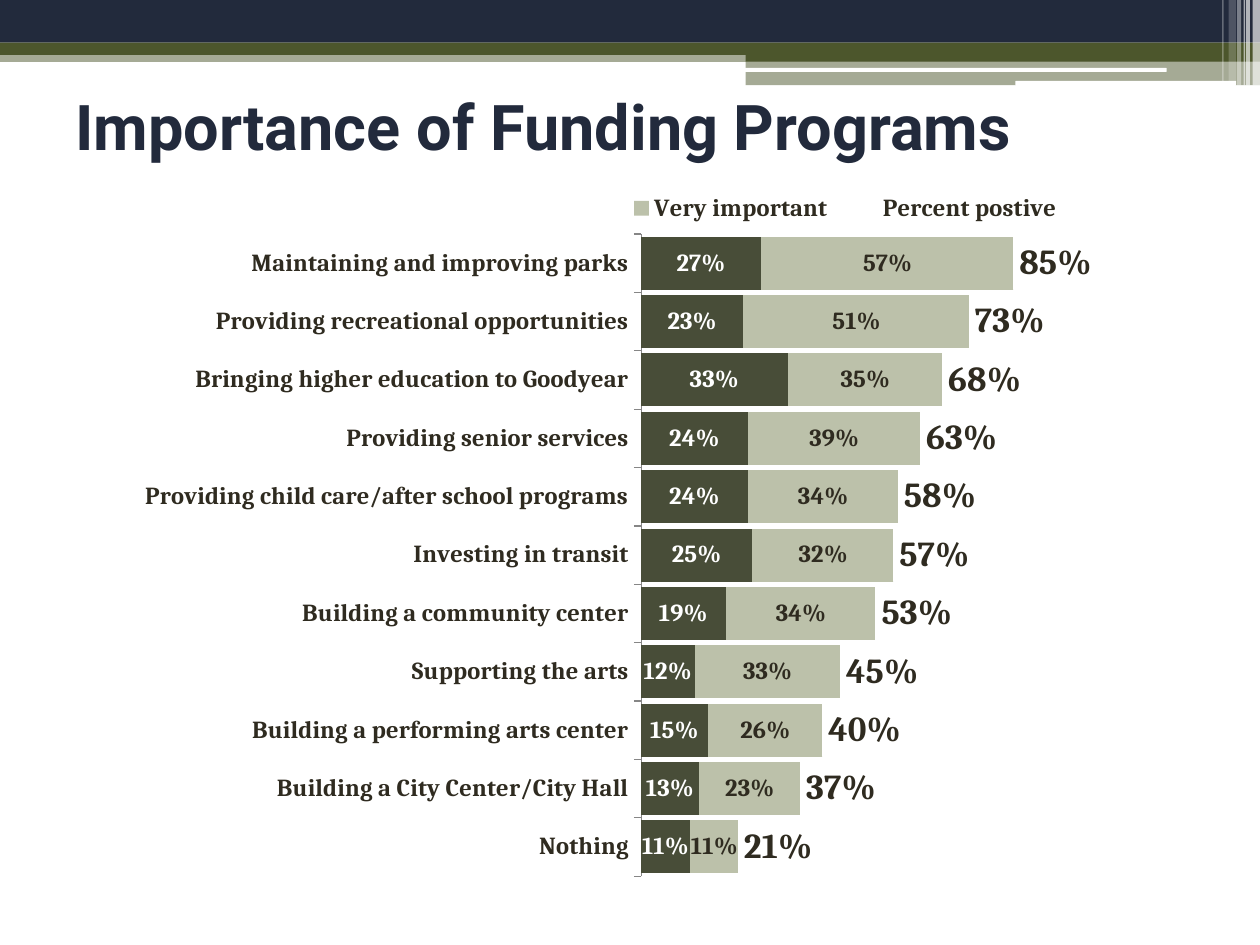
"""Builds the slide on the importance of funding programs."""
from lxml.etree import SubElement
from pptx import Presentation
from pptx.chart.data import CategoryChartData
from pptx.dml.color import RGBColor
from pptx.enum.chart import XL_CHART_TYPE, XL_LABEL_POSITION, XL_LEGEND_POSITION, XL_TICK_LABEL_POSITION, XL_TICK_MARK
from pptx.enum.shapes import MSO_SHAPE
from pptx.enum.text import MSO_ANCHOR
from pptx.oxml import parse_xml
from pptx.oxml.ns import nsdecls, qn
from pptx.util import Cm, Pt

NAVY, OLIVE, WHITE, INK = "222A3C", "4C562C", "FFFFFF", "2F2B20"
BANDS = [
    (0, 1.02, 25.4, 0.23, OLIVE, 50),
    (0, 0, 25.4, 0.86, NAVY, 100),
    (0, 0.86, 25.4, 0.25, OLIVE, 100),
    (15.03, 0.99, 10.37, 0.25, OLIVE, 100),
    (15.03, 1.23, 10.37, 0.49, OLIVE, 50),
]
ROUNDED_BARS = [(15.01, 1.37, 8.51, 0.08), (20.47, 1.63, 4.45, 0.1)]
STRIPES = [
    (25.25, 0.15, 1.73, 65),
    (25.12, 0.08, 1.73, 65),
    (25.07, 0.03, 1.73, 60),
    (24.94, 0.08, 1.73, 40),
    (24.77, 0.15, 1.63, 20),
    (24.64, 0.03, 1.63, 30),
]
PROGRAMS = [
    ("Nothing", 0.11, 0.11, 0.21),
    ("Building a City Center/City Hall", 0.13, 0.23, 0.37),
    ("Building a performing arts center", 0.15, 0.26, 0.40),
    ("Supporting the arts", 0.12, 0.33, 0.45),
    ("Building a community center", 0.19, 0.34, 0.53),
    ("Investing in transit", 0.25, 0.32, 0.57),
    ("Providing child care/after school programs", 0.24, 0.34, 0.58),
    ("Providing senior services", 0.24, 0.39, 0.63),
    ("Bringing higher education to Goodyear", 0.33, 0.35, 0.68),
    ("Providing recreational opportunities", 0.23, 0.51, 0.73),
    ("Maintaining and improving parks", 0.27, 0.57, 0.85),
]
SERIES = [
    ("", "484D38", WHITE, 14, XL_LABEL_POSITION.CENTER),
    ("Very important", "BCC1AA", INK, 14, XL_LABEL_POSITION.CENTER),
    ("Percent postive", None, INK, 20, XL_LABEL_POSITION.INSIDE_BASE),
]


def color(hex_string):
    return RGBColor.from_string(hex_string)


def format_font(font, name="Cambria", size=14, fill=INK, bold=True):
    font.name, font.size, font.bold = name, Pt(size), bold
    font.color.rgb = color(fill)


def add_block(slide, left, top, width, height, fill, opacity=100, kind=MSO_SHAPE.RECTANGLE):
    shape = slide.shapes.add_shape(kind, Cm(left), Cm(top), Cm(width), Cm(height))
    shape.shadow.inherit = False
    shape.line.fill.background()
    shape.fill.solid()
    shape.fill.fore_color.rgb = color(fill)
    if opacity < 100:
        fill_color = shape.fill._xPr.find(qn("a:solidFill"))[0]
        SubElement(fill_color, qn("a:alpha")).set("val", str(opacity * 1000))


def add_text(slide, text, left, top, width, height, **font_format):
    box = slide.shapes.add_textbox(Cm(left), Cm(top), Cm(width), Cm(height))
    frame = box.text_frame
    frame.word_wrap = True
    frame.vertical_anchor = MSO_ANCHOR.MIDDLE
    run = frame.paragraphs[0].add_run()
    run.text = text
    format_font(run.font, **font_format)


def set_layout(parent, index, left, top, width, height, inner=False):
    for old_layout in parent.findall(qn("c:layout")):
        parent.remove(old_layout)
    target = '<c:layoutTarget val="inner"/>' if inner else ""
    modes = '<c:xMode val="edge"/><c:yMode val="edge"/>'
    sizes = "".join(f'<c:{tag} val="{value}"/>' for tag, value in zip("xywh", (left, top, width, height)))
    parent.insert(index, parse_xml(
        f'<c:layout {nsdecls("c")}><c:manualLayout>{target}{modes}{sizes}</c:manualLayout></c:layout>'))


def add_legend(chart):
    chart.has_legend = True
    legend = chart.legend
    legend.position = XL_LEGEND_POSITION.TOP
    legend.include_in_layout = False
    format_font(legend.font)
    set_layout(legend._element, 1, 0.48, 0.03, 0.42, 0.05)
    legend._element.insert(1, parse_xml(
        f'<c:legendEntry {nsdecls("c")}><c:idx val="2"/><c:delete val="1"/></c:legendEntry>'))


def format_axes(chart):
    category_axis, value_axis = chart.category_axis, chart.value_axis
    category_axis.major_tick_mark = XL_TICK_MARK.OUTSIDE
    category_axis.tick_label_position = XL_TICK_LABEL_POSITION.LOW
    category_axis.has_major_gridlines = False
    category_axis.format.line.color.rgb = color("868686")
    category_axis.format.line.width = Pt(0.75)
    format_font(category_axis.tick_labels.font)
    value_axis.minimum_scale, value_axis.maximum_scale, value_axis.major_unit = 0, 1.2, 0.2
    value_axis.has_major_gridlines = False
    value_axis.visible = False


def format_series(series, fill, label_color, label_size, position):
    if fill:
        series.format.fill.solid()
        series.format.fill.fore_color.rgb = color(fill)
    else:
        series.format.fill.background()
        series.format.line.color.rgb = color(WHITE)
        series.format.line.width = Pt(1.5)
    labels = series.data_labels
    labels.show_value = True
    labels.number_format, labels.number_format_is_linked = "0%", False
    labels.position = position
    format_font(labels.font, size=label_size, fill=label_color)


def add_importance_chart(slide):
    names, *columns = zip(*PROGRAMS)
    data = CategoryChartData(number_format="0%")
    data.categories = names
    for (name, *_), values in zip(SERIES, columns):
        data.add_series(name, values)
    chart = slide.shapes.add_chart(
        XL_CHART_TYPE.BAR_STACKED, Cm(1.27), Cm(3.38), Cm(22.86), Cm(14.88), data).chart
    chart.has_title = False
    format_font(chart.font, size=9, bold=False)
    plot = chart.plots[0]
    plot.gap_width, plot.overlap, plot.vary_by_categories = 10, 100, False
    for series, (_, *series_format) in zip(plot.series, SERIES):
        format_series(series, *series_format)
    format_axes(chart)
    add_legend(chart)
    set_layout(chart._chartSpace.chart.plotArea, 0, 0.51, 0.09, 0.47, 0.87, inner=True)


def main():
    presentation = Presentation()
    presentation.slide_width, presentation.slide_height = Cm(25.4), Cm(19.05)
    slide = presentation.slides.add_slide(presentation.slide_layouts[6])
    for band in BANDS:
        add_block(slide, *band)
    for bar in ROUNDED_BARS:
        add_block(slide, *bar, WHITE, kind=MSO_SHAPE.ROUNDED_RECTANGLE)
    for left, width, height, opacity in STRIPES:
        add_block(slide, left, 0, width, height, WHITE, opacity)
    add_text(slide, "Importance of Funding Programs", 1.27, 1.47, 22.86, 2.11,
             name="Roboto", size=36, fill=NAVY)
    add_importance_chart(slide)
    presentation.save("out.pptx")


if __name__ == "__main__":
    main()
